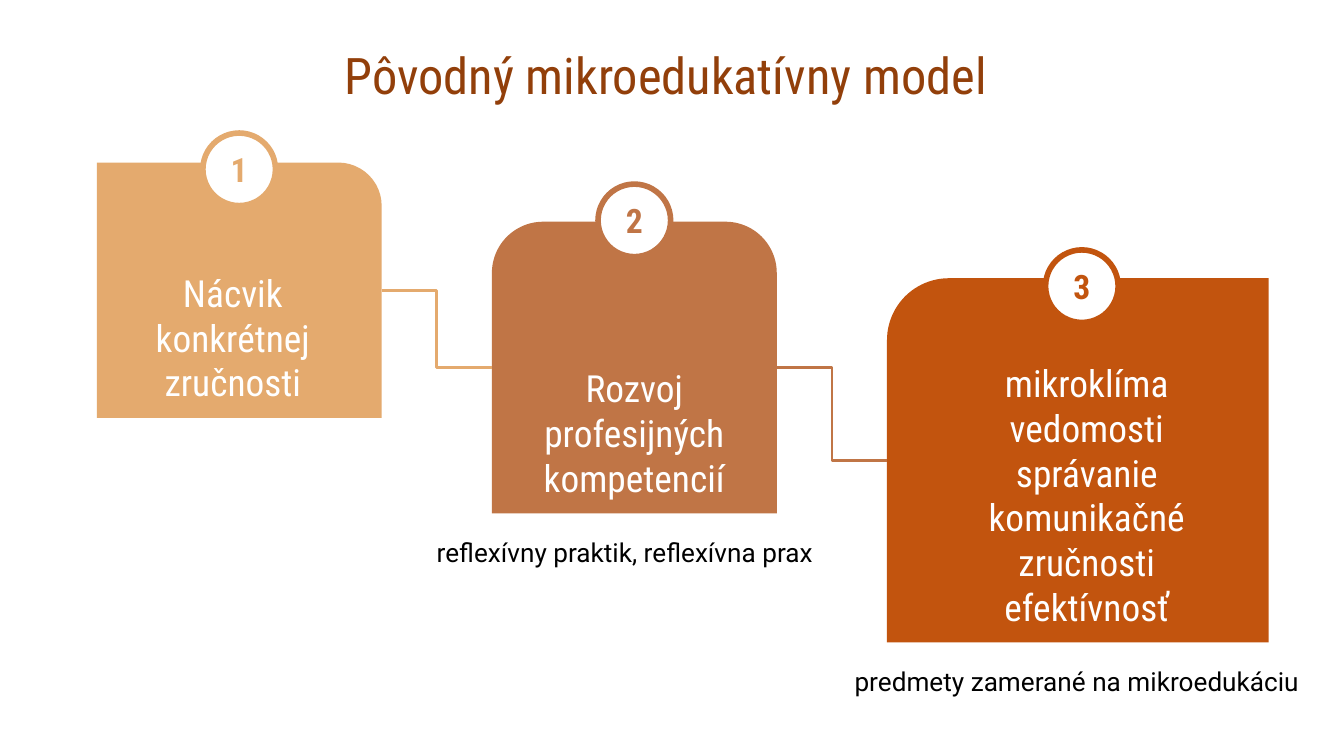
from dataclasses import dataclass

from lxml.etree import SubElement
from pptx import Presentation
from pptx.dml.color import RGBColor
from pptx.enum.shapes import MSO_CONNECTOR as Link, MSO_SHAPE as Kind
from pptx.enum.text import MSO_ANCHOR as Anchor, MSO_AUTO_SIZE as Fit, PP_ALIGN as Align
from pptx.oxml.ns import qn
from pptx.shapes.autoshape import Shape
from pptx.shapes.shapetree import SlideShapes
from pptx.text.text import TextFrame
from pptx.util import Inches, Pt

HEAD = "Roboto Condensed"
BODY = "Roboto"
WHITE = "FFFFFF"
DOT = 0.54
WIDE = 10


@dataclass
class Step:
    """A card with its numbered dot."""
    kind: Kind
    box: tuple[float, float, float, float]
    bends: tuple[float, ...]
    color: str
    dot: tuple[float, float]
    lines: tuple[str, ...]
    flip: bool = False


@dataclass
class Note:
    """A caption below a card."""
    box: tuple[float, float, float, float]
    text: str
    align: Align


STEPS = (
    Step(Kind.ROUND_1_RECTANGLE, (0.72, 1.21, 2.12, 1.9), (0.17,), "E4AA6E",
         (1.51, 0.99), ("Nácvik konkrétnej zručnosti",)),
    Step(Kind.ROUND_2_SAME_RECTANGLE, (3.66, 1.65, 2.12, 2.17), (0.18, 0), "C07546",
         (4.45, 1.37), ("Rozvoj profesijných kompetencií",)),
    Step(Kind.ROUND_1_RECTANGLE, (6.6, 2.07, 2.84, 2.71), (0.17,), "C2540E",
         (7.78, 1.86),
         ("mikroklíma", "vedomosti", "správanie", "komunikačné zručnosti", "efektívnosť"),
         True),
)
NOTES = (
    Note((3.11, 3.91, 3.08, 0.36), "reflexívny praktik, reflexívna prax", Align.CENTER),
    Note((6.26, 4.86, 3.58, 0.38), "predmety zamerané na mikroedukáciu", Align.LEFT),
)


def paint(code: str) -> RGBColor:
    """Turn a hex string into a colour."""
    return RGBColor.from_string(code)


def write(frame: TextFrame, lines: tuple[str, ...], size: int, color: str,
          font: str = HEAD, bold: bool = False, align: Align = Align.CENTER,
          anchor: Anchor = Anchor.MIDDLE, space: float = 1.0) -> None:
    """Fill a text frame with one paragraph per line."""
    frame.word_wrap = True
    frame.auto_size = Fit.NONE
    frame.vertical_anchor = anchor
    frame.margin_left = frame.margin_right = Inches(0.1)
    frame.margin_top = frame.margin_bottom = Inches(0.1)
    for i, line in enumerate(lines):
        para = frame.add_paragraph() if i else frame.paragraphs[0]
        para.alignment = align
        para.line_spacing = space
        run = para.add_run()
        run.text = line
        run.font.name = font
        run.font.size = Pt(size)
        run.font.bold = bold
        run.font.color.rgb = paint(color)


def block(shapes: SlideShapes, kind: Kind, box: tuple[float, ...], fill: str) -> Shape:
    """Add a plain filled shape without outline or shadow."""
    shape = shapes.add_shape(kind, *map(Inches, box))
    shape.shadow.inherit = False
    shape.fill.solid()
    shape.fill.fore_color.rgb = paint(fill)
    shape.line.fill.background()
    return shape


def card(shapes: SlideShapes, step: Step) -> None:
    """Draw the card of a step."""
    shape = block(shapes, step.kind, step.box, step.color)
    for i, bend in enumerate(step.bends):
        shape.adjustments[i] = bend
    if step.flip:
        shape._element.spPr.find(qn("a:xfrm")).set("flipH", "1")
    write(shape.text_frame, step.lines, 20, WHITE, anchor=Anchor.BOTTOM)


def dot(shapes: SlideShapes, step: Step, num: int) -> None:
    """Draw the numbered dot of a step."""
    shape = block(shapes, Kind.OVAL, (*step.dot, DOT, DOT), WHITE)
    shape.line.color.rgb = paint(step.color)
    shape.line.width = Pt(3)
    write(shape.text_frame, (str(num),), 18, step.color, bold=True)


def link(shapes: SlideShapes, start: Step, end: Step) -> None:
    """Draw an elbow from the right of one card to the left of the next."""
    left, top, width, height = start.box
    x, y, _, tall = end.box
    ends = (left + width, top + height / 2, x, y + tall / 2)
    line = shapes.add_connector(Link.ELBOW, *map(Inches, ends))
    line.line.color.rgb = paint(start.color)
    line.line.width = Pt(1.5)
    SubElement(line._element.spPr, qn("a:effectLst"))


def main() -> None:
    """Build and save the slide."""
    deck = Presentation()
    deck.slide_width, deck.slide_height = Inches(WIDE), Inches(WIDE * 9 / 16)
    shapes = deck.slides.add_slide(deck.slide_layouts[5]).shapes
    title = shapes.title
    title.left, title.top, title.width, title.height = map(Inches, (0.45, 0.43, 9.01, 0.24))
    write(title.text_frame, ("Pôvodný mikroedukatívny model",), 27, "923F0A")
    for step in STEPS:
        card(shapes, step)
    for start, end in zip(STEPS, STEPS[1:]):
        link(shapes, start, end)
    for note in NOTES:
        area = shapes.add_textbox(*map(Inches, note.box))
        write(area.text_frame, (note.text,), 14, "000000", BODY, align=note.align, space=1.15)
    for num, step in enumerate(STEPS, 1):
        dot(shapes, step, num)
    deck.save("out.pptx")


if __name__ == "__main__":
    main()
